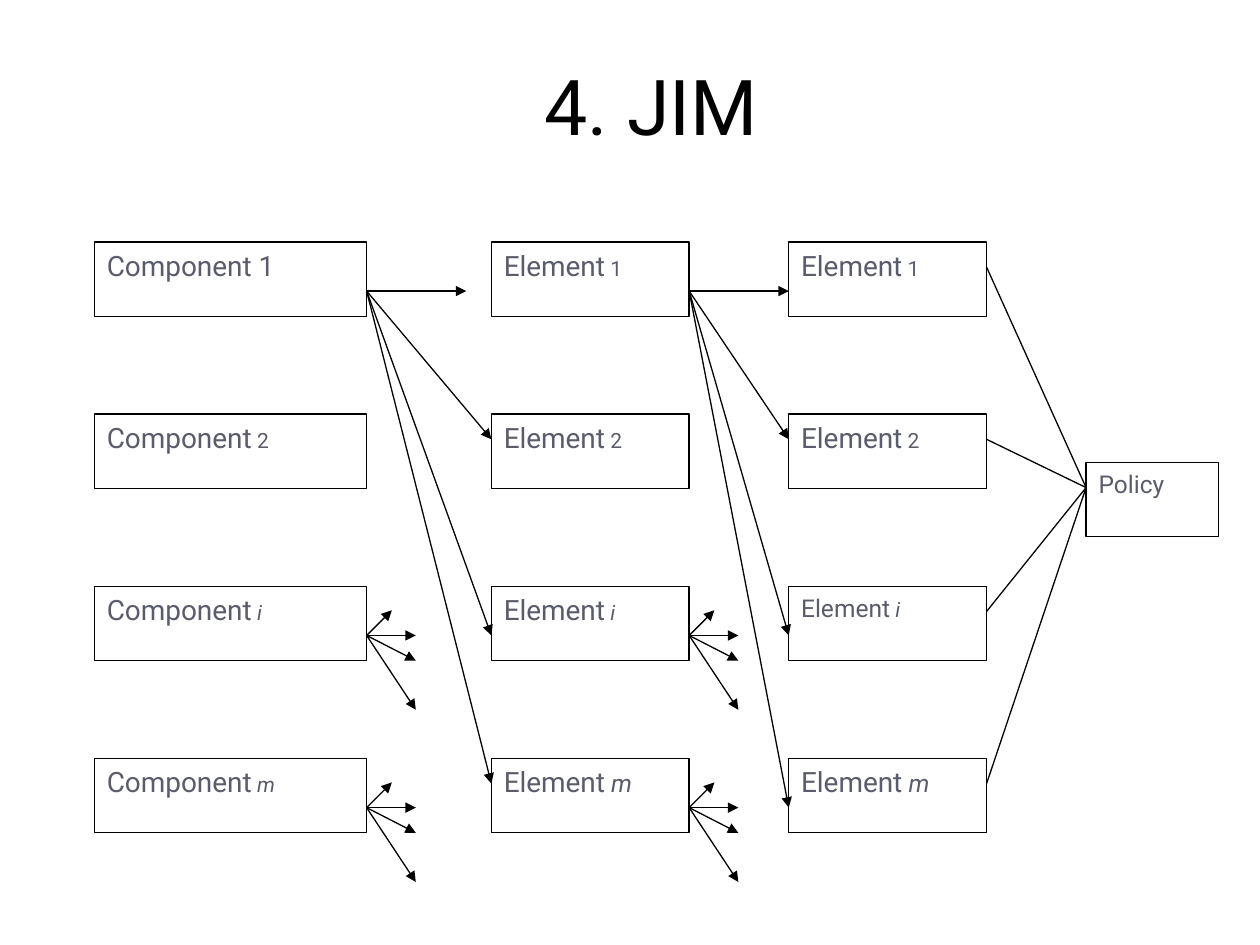
from pptx import Presentation
from pptx.dml.color import RGBColor
from pptx.enum.shapes import MSO_CONNECTOR, MSO_SHAPE
from pptx.enum.text import MSO_ANCHOR, PP_ALIGN
from pptx.oxml.ns import qn
from pptx.util import Inches, Pt
from lxml.etree import SubElement

THEME = {
    "font": "Roboto",
    "title": 44, "large": 16, "medium": 14, "small": 12,
    "black": RGBColor(0x00, 0x00, 0x00),
    "white": RGBColor(0xFF, 0xFF, 0xFF),
    "text": RGBColor(0x5A, 0x5C, 0x6C),
    "line": 0.75,
}

TITLE = "4. JIM"
# Each column: left, width, and per row (word, word size, index, index size)
COLUMNS = [
    (0.75, 2.16, [("Component", "large", "1", "large"),
                  ("Component", "large", "2", "small"),
                  ("Component", "large", "i", "small"),
                  ("Component", "large", "m", "small")]),
    (3.9, 1.57, [("Element", "large", "1", "small"),
                 ("Element", "large", "2", "small"),
                 ("Element", "large", "i", "small"),
                 ("Element", "large", "m", "medium")]),
    (6.26, 1.57, [("Element", "large", "1", "small"),
                  ("Element", "large", "2", "small"),
                  ("Element", "medium", "i", "small"),
                  ("Element", "large", "m", "medium")]),
]
POLICY = (8.62, 3.67, 1.05, "Policy")

BOX_H = 0.59
FIRST_ROW, LAST_ROW = 1.92, 6.02
ROWS = [FIRST_ROW + i * (LAST_ROW - FIRST_ROW) / 3 for i in range(4)]
UPPER, LOWER = 0.2, 0.39  # heights on a box side where lines meet it

# Arrows out of the first row: (x of the tip, depth of the tip in its row)
FANS = [
    [(3.7, LOWER), (3.9, UPPER), (3.9, LOWER), (3.9, UPPER)],
    [(6.26, LOWER), (6.26, UPPER), (6.26, LOWER), (6.26, LOWER)],
]
STUBS = [(0.39, 0), (0.2, -0.2), (0.39, 0.2), (0.39, 0.59)]
STUB_ROWS = ROWS[2:]


def style(r, size, color, italic=False):
    r.font.name = THEME["font"]
    r.font.size = Pt(THEME[size])
    r.font.color.rgb = THEME[color]
    if italic:
        r.font.italic = True


def add_box(s, x, y, w, parts):
    """Draw a box holding (text, size) parts; letter indices are italic."""
    sp = s.shapes.add_shape(MSO_SHAPE.RECTANGLE, Inches(x), Inches(y),
                            Inches(w), Inches(BOX_H))
    sp.shadow.inherit = False
    sp.fill.solid()
    sp.fill.fore_color.rgb = THEME["white"]
    sp.line.color.rgb = THEME["black"]
    sp.line.width = Pt(THEME["line"])
    tf = sp.text_frame
    tf.vertical_anchor = MSO_ANCHOR.TOP
    p = tf.paragraphs[0]
    p.alignment = PP_ALIGN.LEFT
    for text, size in parts:
        r = p.add_run()
        r.text = text
        style(r, size, "text", italic=text in ("i", "m"))


def add_line(s, start, end, arrow=True):
    c = s.shapes.add_connector(MSO_CONNECTOR.STRAIGHT,
                               *(Inches(v) for v in (*start, *end)))
    c.line.color.rgb = THEME["black"]
    c.line.width = Pt(THEME["line"])
    if arrow:
        SubElement(c.line._get_or_add_ln(), qn("a:tailEnd"), type="triangle")
    SubElement(c._element.spPr, qn("a:effectLst"))


def add_title(s):
    sp = s.shapes.title
    sp.left, sp.top, sp.width, sp.height = (
        Inches(v) for v in (0.92, 0.25, 8.5, 1))
    tf = sp.text_frame
    tf.text = TITLE
    tf.vertical_anchor = MSO_ANCHOR.BOTTOM
    p = tf.paragraphs[0]
    p.alignment = PP_ALIGN.CENTER
    style(p.runs[0], "title", "black")


def main():
    prs = Presentation()
    prs.slide_width, prs.slide_height = Inches(10), Inches(7.5)
    s = prs.slides.add_slide(prs.slide_layouts[5])
    add_title(s)

    for x, w, labels in COLUMNS:
        for y, (word, size, index, index_size) in zip(ROWS, labels):
            add_box(s, x, y, w, [(word, size), (" ", index_size),
                                 (index, index_size)])
    policy_x, policy_y, policy_w, policy_text = POLICY
    add_box(s, policy_x, policy_y, policy_w, [(policy_text, "medium")])

    for (x, w, _), tips in zip(COLUMNS, FANS):
        right = x + w
        for y, (tip_x, depth) in zip(ROWS, tips):
            add_line(s, (right, FIRST_ROW + LOWER), (tip_x, y + depth))
        for y in STUB_ROWS:
            for dx, dy in STUBS:
                add_line(s, (right, y + LOWER), (right + dx, y + LOWER + dy))

    x, w, _ = COLUMNS[-1]
    for y in ROWS:
        add_line(s, (x + w, y + UPPER), (policy_x, policy_y + UPPER),
                 arrow=False)

    prs.save("out.pptx")


if __name__ == "__main__":
    main()
